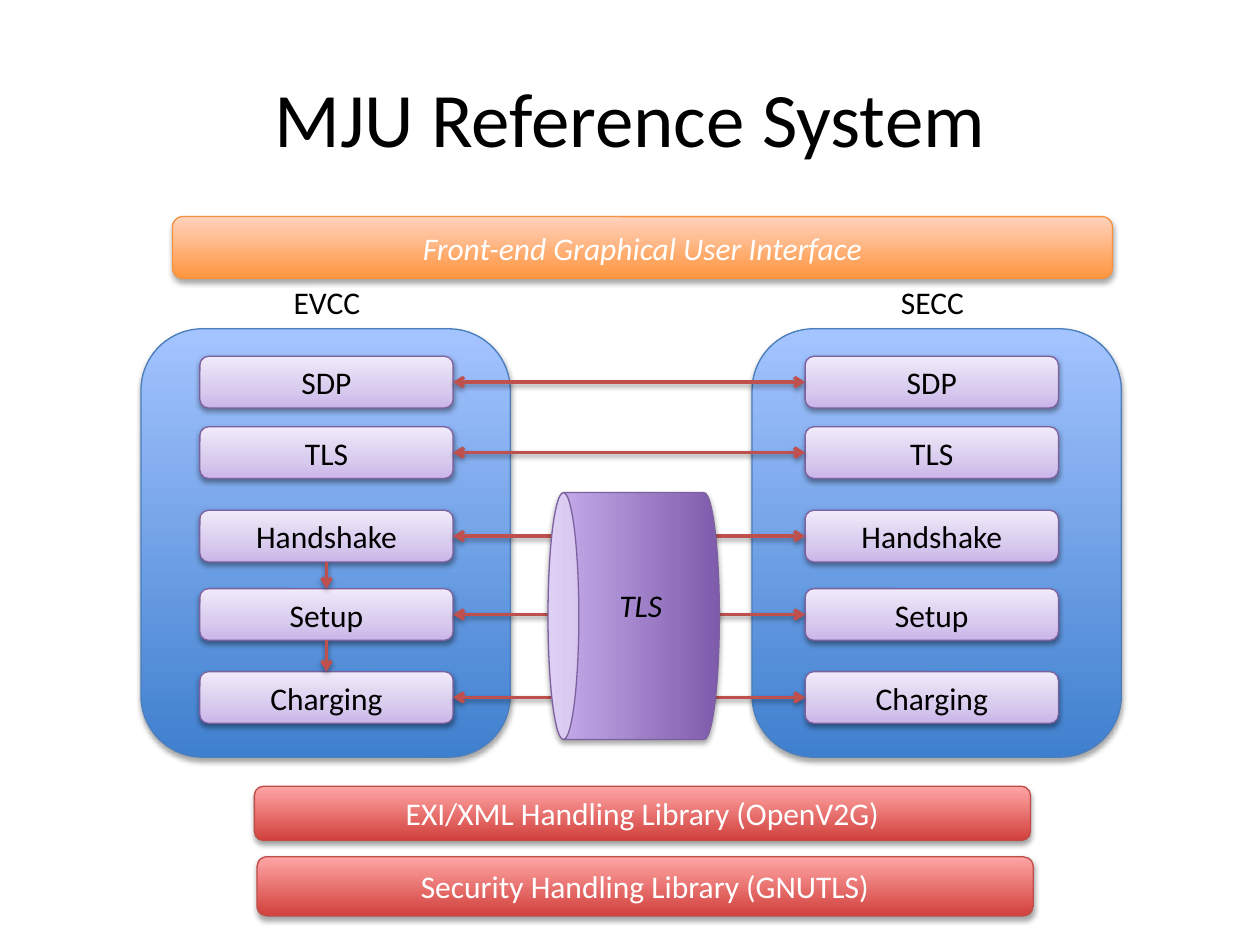
"""Build the reference system slide: two controllers, their protocol steps and shared libraries."""
from pptx import Presentation
from pptx.dml.color import RGBColor
from pptx.enum.shapes import MSO_CONNECTOR, MSO_SHAPE
from pptx.enum.text import MSO_ANCHOR, MSO_AUTO_SIZE, PP_ALIGN
from pptx.oxml import parse_xml
from pptx.oxml.ns import nsdecls
from pptx.util import Pt

COLORS = {"black": "000000", "white": "FFFFFF", "arrow": "C0504D"}
STYLES = {
    "panel": {"stops": {0: "3F80CE", 100: "A4C4FF"}, "line": "4B7EBC", "shadow": (35, 1.8)},
    "library": {"stops": {0: "D1403C", 100: "FFA6A5"}, "line": "BF4C48", "shadow": (35, 1.8)},
    "frontend": {"stops": {0: "FF953E", 100: "FFD2BD"}, "line": "F69240", "shadow": (35, 1.8)},
    "tunnel": {"stops": {0: "7F5BAB", 100: "C8B0ED"}, "line": "7D60A0", "shadow": (35, 1.8)},
    "step": {"stops": {0: "C9B5E8", 35: "D8CBEE", 100: "F0EAF9"}, "line": "7D60A0",
             "shadow": (38, 1.6)},
}
STEP_TOPS = {"SDP": 203.6, "TLS": 243.9, "Handshake": 291.6, "Setup": 336.4, "Charging": 383.8}
SIDES = {"EVCC": (80.6, 159.8, 54, 114.2), "SECC": (429.8, 506.9, 51.8, 460.1)}
ROUNDED = MSO_SHAPE.ROUNDED_RECTANGLE


def write(box, text, size=18, color="black", italic=False):
    """Put one centred, formatted line of text in a box."""
    box.text_frame.vertical_anchor = MSO_ANCHOR.MIDDLE
    para = box.text_frame.paragraphs[0]
    para.alignment = PP_ALIGN.CENTER
    span = para.add_run()
    span.text = text
    for name, value in {"name": "Calibri", "size": Pt(size), "italic": italic}.items():
        setattr(span.font, name, value)
    span.font.color.rgb = RGBColor.from_string(COLORS[color])


def decorate(item, style=None):
    """Give a shape its gradient, outline and shadow, or a connector its line and shadow."""
    look = STYLES[style] if style else {"line": COLORS["arrow"], "shadow": (38, 1.6)}
    if style:
        stops = "".join(f'<a:gs pos="{place * 1000}"><a:srgbClr val="{color}"/></a:gs>'
                        for place, color in look["stops"].items())
        item.fill.background()
        properties = item.element.spPr
        blank = properties.find("{*}noFill")
        properties.replace(blank, parse_xml(
            f'<a:gradFill {nsdecls("a")} rotWithShape="1"><a:gsLst>{stops}</a:gsLst>'
            '<a:lin ang="16200000" scaled="0"/></a:gradFill>'))
    item.line.color.rgb = RGBColor.from_string(look["line"])
    item.line.width = Pt(0.75 if style else 2)
    alpha, distance = look["shadow"]
    item.element.spPr.append(parse_xml(
        f'<a:effectLst {nsdecls("a")}><a:outerShdw blurRad="{Pt(3.1)}" dist="{Pt(distance)}" '
        'dir="5400000" rotWithShape="0"><a:srgbClr val="000000">'
        f'<a:alpha val="{alpha * 1000}"/></a:srgbClr></a:outerShdw></a:effectLst>'))


deck = Presentation()
deck.slide_width, deck.slide_height = Pt(720), Pt(540)
page = deck.slides.add_slide(deck.slide_layouts[5])
shapes = page.shapes

title = shapes.title
for name, value in {"left": 36, "top": 21.6, "width": 648, "height": 90}.items():
    setattr(title, name, Pt(value))
write(title, "MJU Reference System", size=44)

steps = {}
labels = []
for side, (panel_left, label_left, label_width, step_left) in SIDES.items():
    panel = shapes.add_shape(ROUNDED, Pt(panel_left), Pt(187.9), Pt(211), Pt(244.8))
    decorate(panel, "panel")
    labels.append((side, label_left, 158.4, label_width, False))
    for step, top in STEP_TOPS.items():
        box = shapes.add_shape(ROUNDED, Pt(step_left), Pt(top), Pt(144.7), Pt(29.5))
        decorate(box, "step")
        write(box, step)
        steps[side, step] = box

links = [(("EVCC", step), 3, ("SECC", step), 1) for step in STEP_TOPS]
links += [(("EVCC", "Handshake"), 2, ("EVCC", "Setup"), 0),
          (("EVCC", "Setup"), 2, ("EVCC", "Charging"), 0)]
for start, start_site, end, end_site in links:
    arrow = shapes.add_connector(MSO_CONNECTOR.STRAIGHT, 0, 0, 0, 0)
    arrow.begin_connect(steps[start], start_site)
    arrow.end_connect(steps[end], end_site)
    decorate(arrow)
    for tip in ("headEnd", "tailEnd") if start_site == 3 else ("tailEnd",):
        arrow.line._get_or_add_ln().append(parse_xml(f'<a:{tip} {nsdecls("a")} type="arrow"/>'))

bars = [
    ("Front-end Graphical User Interface", "frontend", 98.6, 123.8, 537.1, 35.3, True),
    ("EXI/XML Handling Library (OpenV2G)", "library", 145.4, 449.3, 443.5, 31, False),
    ("Security Handling Library (GNUTLS)", "library", 146.9, 489.6, 443.5, 33.8, False),
]
for text, style, left, top, width, height, italic in bars:
    bar = shapes.add_shape(ROUNDED, Pt(left), Pt(top), Pt(width), Pt(height))
    decorate(bar, style)
    write(bar, text, color="white", italic=italic)

tunnel = shapes.add_shape(MSO_SHAPE.CAN, Pt(291.6), Pt(303.1), Pt(141.1), Pt(97.9))
tunnel.rotation = 270
tunnel.adjustments[0] = 0.18
decorate(tunnel, "tunnel")

labels.append(("TLS", 344.2, 331.2, 43.9, True))
for text, left, top, width, italic in labels:
    label = shapes.add_textbox(Pt(left), Pt(top), Pt(width), Pt(28.8))
    write(label, text, italic=italic)
    for name, value in {"word_wrap": False, "auto_size": MSO_AUTO_SIZE.SHAPE_TO_FIT_TEXT,
                        "vertical_anchor": MSO_ANCHOR.TOP}.items():
        setattr(label.text_frame, name, value)

deck.save("out.pptx")
